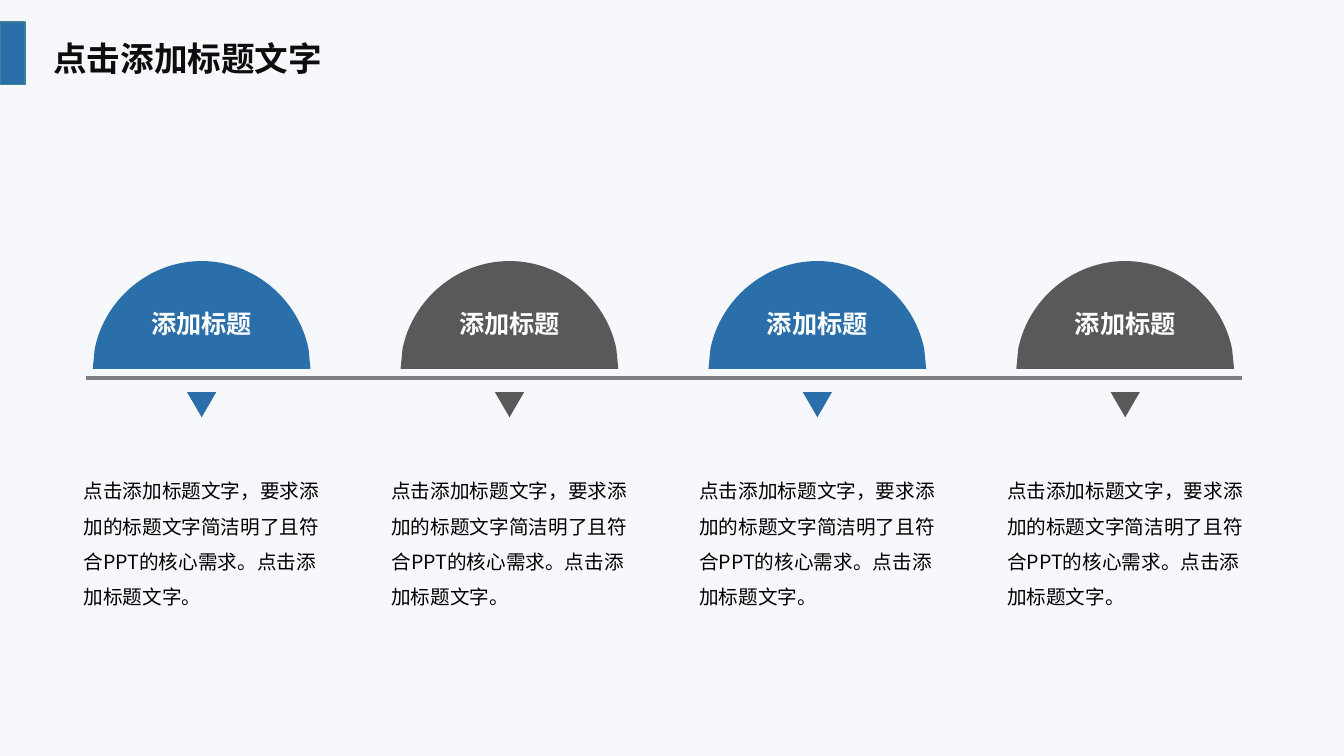
from dataclasses import dataclass

from lxml import etree
from pptx import Presentation
from pptx import util as u
from pptx.dml.color import RGBColor
from pptx.enum import shapes, text
from pptx.oxml.ns import qn


@dataclass(frozen=True)
class Theme:
    font: str = "Noto Sans CJK SC"
    background: str = "F6F8FC"
    blue: str = "2A6FAA"
    gray: str = "595959"
    rule: str = "808080"
    tab_edge: str = "427E96"
    title: str = "0D0D0D"
    body: str = "000000"
    label: str = "FFFFFF"
    title_size: int = 24
    label_size: int = 18
    body_size: int = 14


THEME = Theme()
WIDTH, HEIGHT = 13.33, 7.5

COLUMNS = 4
FIRST_CENTER, LAST_CENTER = 2.0, 11.16
PITCH = (LAST_CENTER - FIRST_CENTER) / (COLUMNS - 1)

DOME_TOP, LABEL_TOP, RULE_Y, POINTER_TOP, BODY_TOP = 2.59, 3.01, 3.75, 3.89, 4.59
DOME_RIGHT = ((0, 0), (0.52, 0), (0.96, 0.38), (1.06, 0.87), (1.08, 1.07))

TITLE = "点击添加标题文字"
LABEL = "添加标题"
BODY = "点击添加标题文字，要求添加的标题文字简洁明了且符合PPT的核心需求。点击添加标题文字。"


def color(value):
    return RGBColor.from_string(value)


def paint(shape, fill, edge=None):
    shape.shadow.inherit = False
    shape.fill.solid()
    shape.fill.fore_color.rgb = color(fill)
    if edge:
        shape.line.color.rgb = color(edge)
        shape.line.width = u.Pt(1)
    else:
        shape.line.fill.background()


def add_preset(slide, preset, left, top, width, height, fill, edge=None):
    shape = slide.shapes.add_shape(preset, *map(u.Inches, (left, top, width, height)))
    paint(shape, fill, edge)
    return shape


def add_text(slide, words, left, top, width, height, size, ink, bold=False, **layout):
    """Add one paragraph; layout holds paragraph attributes."""
    box = slide.shapes.add_textbox(*map(u.Inches, (left, top, width, height)))
    frame = box.text_frame
    frame.word_wrap = True
    frame.auto_size = text.MSO_AUTO_SIZE.SHAPE_TO_FIT_TEXT
    paragraph = frame.paragraphs[0]
    for name, value in layout.items():
        setattr(paragraph, name, value)
    run = paragraph.add_run()
    run.text = words
    for name, value in {"name": THEME.font, "size": u.Pt(size), "bold": bold}.items():
        setattr(run.font, name, value)
    run.font.color.rgb = color(ink)
    east_asian = etree.SubElement(run.font._element, qn("a:ea"))
    east_asian.set("typeface", THEME.font)


def bend(segments):
    """Turn three line segments into one Bezier curve through their points."""
    curve = etree.Element(qn("a:cubicBezTo"))
    segments[0].addprevious(curve)
    for segment in segments:
        curve.append(segment[0])
        segment.getparent().remove(segment)


def add_dome(slide, center, fill):
    outline = DOME_RIGHT + tuple((-x, y) for x, y in reversed(DOME_RIGHT))
    points = [(u.Inches(center + x), u.Inches(DOME_TOP + y)) for x, y in outline]
    builder = slide.shapes.build_freeform(*points[0])
    builder.add_line_segments(points[1:], close=True)
    dome = builder.convert_to_shape()
    segments = list(dome._element.iter(qn("a:lnTo")))
    bend(segments[:3])
    bend(segments[-3:])
    paint(dome, fill)


def add_pointer(slide, center, fill):
    width, height = 0.29, 0.25
    pointer = add_preset(slide, shapes.MSO_SHAPE.ISOSCELES_TRIANGLE,
                         center - width / 2, POINTER_TOP, width, height, fill)
    pointer._element.spPr.xfrm.set("flipV", "1")


def add_rule(slide):
    ends = (0.85, RULE_Y, 12.32, RULE_Y)
    rule = slide.shapes.add_connector(shapes.MSO_CONNECTOR.STRAIGHT, *map(u.Inches, ends))
    rule.line.color.rgb = color(THEME.rule)
    rule.line.width = u.Pt(2.25)
    etree.SubElement(rule._element.spPr, qn("a:effectLst"))


def add_label(slide, center):
    width = 1.78
    add_text(slide, LABEL, center - width / 2, LABEL_TOP, width, 0.4,
             THEME.label_size, THEME.label, bold=True, alignment=text.PP_ALIGN.CENTER)


def add_body(slide, center):
    width = 2.54
    add_text(slide, BODY, center - width / 2, BODY_TOP, width, 1.47,
             THEME.body_size, THEME.body, line_spacing=1.5)


def add_heading(slide):
    add_preset(slide, shapes.MSO_SHAPE.RECTANGLE, 0, 0.22, 0.25, 0.62,
               THEME.blue, THEME.tab_edge)
    add_text(slide, TITLE, 0.43, 0.33, 4.01, 0.5,
             THEME.title_size, THEME.title, bold=True)


def main():
    presentation = Presentation()
    presentation.slide_width = u.Inches(WIDTH)
    presentation.slide_height = u.Inches(HEIGHT)
    slide = presentation.slides.add_slide(presentation.slide_layouts[6])
    slide.background.fill.solid()
    slide.background.fill.fore_color.rgb = color(THEME.background)
    centers = [FIRST_CENTER + index * PITCH for index in range(COLUMNS)]
    fills = [(THEME.blue, THEME.gray)[index % 2] for index in range(COLUMNS)]
    for center, fill in zip(centers, fills):
        add_dome(slide, center, fill)
    add_rule(slide)
    for center, fill in zip(centers, fills):
        add_pointer(slide, center, fill)
        add_label(slide, center)
        add_body(slide, center)
    add_heading(slide)
    presentation.save("out.pptx")


if __name__ == "__main__":
    main()
